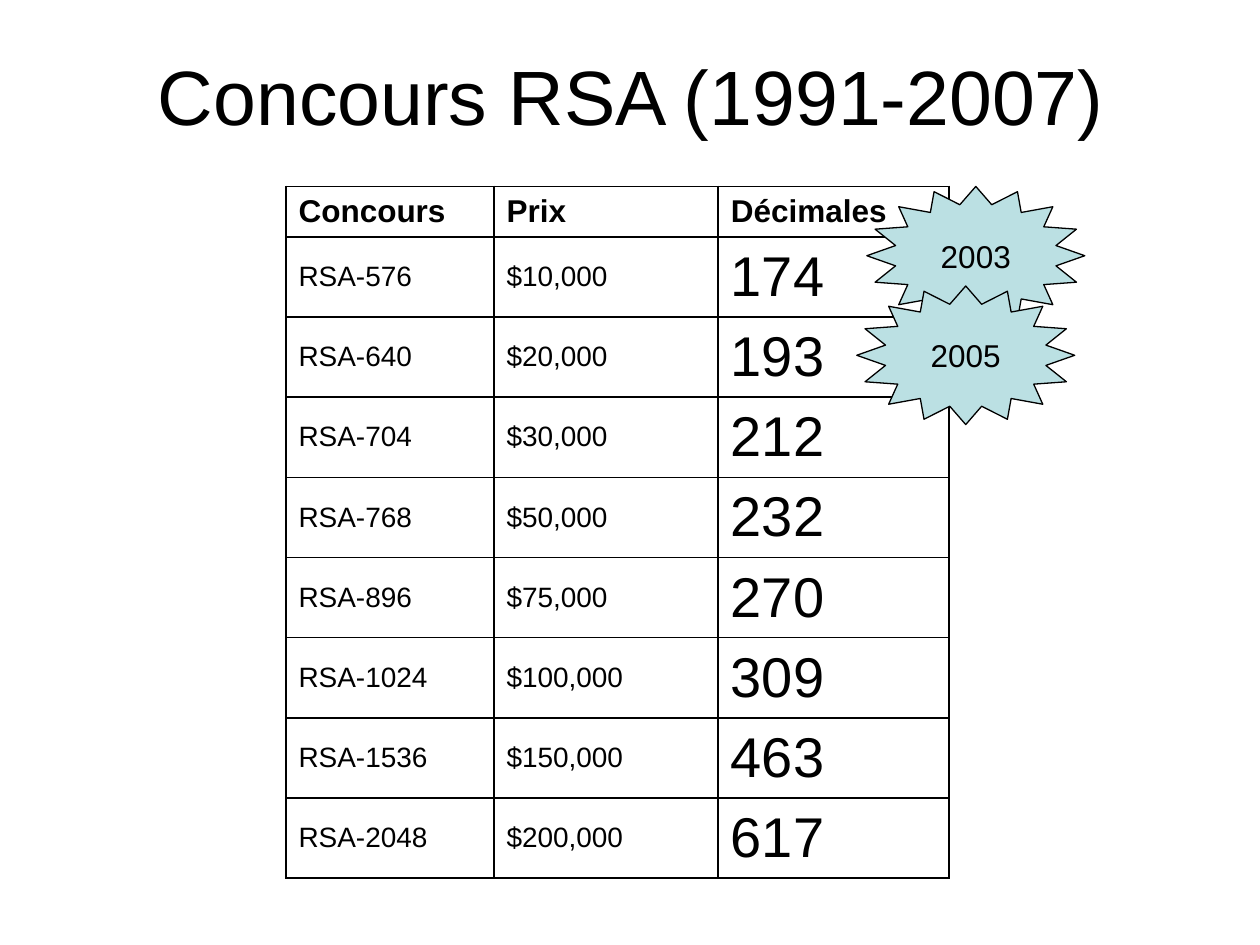
from lxml.etree import SubElement
from pptx import Presentation
from pptx.dml.color import RGBColor
from pptx.enum.shapes import MSO_SHAPE as Preset
from pptx.enum.text import MSO_ANCHOR as Anchor, PP_ALIGN as Align
from pptx.oxml.ns import qn
from pptx.util import Inches, Pt

BLACK = RGBColor(0x00, 0x00, 0x00)
PALE_TEAL = RGBColor(0xBB, 0xE0, 0xE3)

HEADERS = ["Concours", "Prix", "Décimales"]
CONTESTS = [
    ("RSA-576", "$10,000", "174"),
    ("RSA-640", "$20,000", "193"),
    ("RSA-704", "$30,000", "212"),
    ("RSA-768", "$50,000", "232"),
    ("RSA-896", "$75,000", "270"),
    ("RSA-1024", "$100,000", "309"),
    ("RSA-1536", "$150,000", "463"),
    ("RSA-2048", "$200,000", "617"),
]
COLUMN_WIDTHS = [1.65, 1.78, 1.83]
BODY_SIZES = [16, 16, 32]
TABLE_HEIGHT = 5.49
HEADER_HEIGHT = 0.4


def write_text(frame, text, size=18, bold=False, align=Align.LEFT):
    paragraph = frame.paragraphs[0]
    paragraph.alignment = align
    run = paragraph.add_run()
    run.text = text
    run.font.name = "Arial"
    run.font.size = Pt(size)
    run.font.bold = bold
    run.font.color.rgb = BLACK


def add_title(slide, text):
    title = slide.shapes.title
    title.left, title.top = Inches(0.51), Inches(0)
    title.width, title.height = Inches(9), Inches(1.5)
    title.text_frame.vertical_anchor = Anchor.MIDDLE
    write_text(title.text_frame, text, size=44, align=Align.CENTER)


def format_cell(cell):
    cell.vertical_anchor = Anchor.MIDDLE
    cell.margin_left = cell.margin_right = Inches(0.1)
    cell.margin_top = cell.margin_bottom = Inches(0.05)
    properties = cell._tc.get_or_add_tcPr()
    for side in ("a:lnL", "a:lnR", "a:lnT", "a:lnB"):
        border = SubElement(properties, qn(side), w=str(Pt(1)))
        fill = SubElement(border, qn("a:solidFill"))
        SubElement(fill, qn("a:srgbClr"), val=str(BLACK))
    cell.fill.background()


def add_contest_table(slide):
    rows = [HEADERS, *CONTESTS]
    table = slide.shapes.add_table(
        len(rows), len(HEADERS), Inches(2.27), Inches(1.48),
        Inches(sum(COLUMN_WIDTHS)), Inches(TABLE_HEIGHT)).table
    table.horz_banding = False
    for column, width in zip(table.columns, COLUMN_WIDTHS):
        column.width = Inches(width)
    body_height = (TABLE_HEIGHT - HEADER_HEIGHT) / len(CONTESTS)
    for r, values in enumerate(rows):
        is_header = r == 0
        table.rows[r].height = Inches(HEADER_HEIGHT if is_header else body_height)
        for c, value in enumerate(values):
            cell = table.cell(r, c)
            format_cell(cell)
            write_text(cell.text_frame, value, bold=is_header,
                       size=18 if is_header else BODY_SIZES[c])


def add_year_star(slide, year, left, top):
    star = slide.shapes.add_shape(Preset.STAR_16_POINT, Inches(left), Inches(top),
                                  Inches(1.73), Inches(1.1))
    star.adjustments[0] = 0.375
    star.shadow.inherit = False
    star.fill.solid()
    star.fill.fore_color.rgb = PALE_TEAL
    star.line.color.rgb = BLACK
    star.line.width = Pt(0.75)
    star.text_frame.word_wrap = False
    star.text_frame.vertical_anchor = Anchor.MIDDLE
    write_text(star.text_frame, year, align=Align.CENTER)


def main():
    presentation = Presentation()
    presentation.slide_width, presentation.slide_height = Inches(10), Inches(7.5)
    # Title Only layout
    slide = presentation.slides.add_slide(presentation.slide_layouts[5])
    add_title(slide, "Concours RSA (1991-2007)")
    add_contest_table(slide)
    # Year stars over the table's right edge
    add_year_star(slide, "2003", 6.88, 1.48)
    add_year_star(slide, "2005", 6.8, 2.27)
    presentation.save("out.pptx")


if __name__ == "__main__":
    main()
